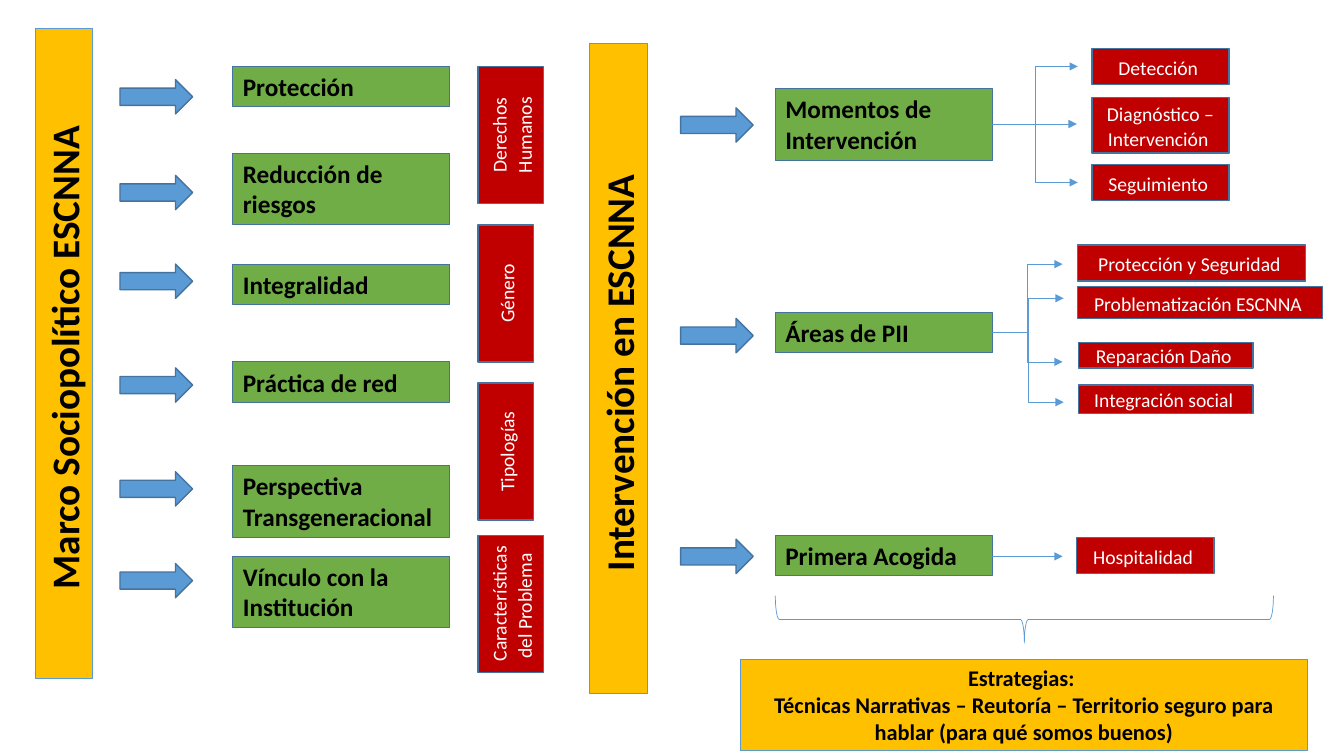
from lxml import etree
from pptx import Presentation
from pptx.dml.color import RGBColor
from pptx.enum import shapes, text
from pptx.oxml import ns
from pptx.util import Inches, Pt

AMBER = RGBColor(0xFF, 0xC0, 0x00)
GREEN = RGBColor(0x70, 0xAD, 0x47)
RED = RGBColor(0xC0, 0x00, 0x00)
BLUE = RGBColor(0x5B, 0x9B, 0xD5)
DARK_BLUE = RGBColor(0x43, 0x73, 0x9E)
BLACK = RGBColor(0, 0, 0)
WHITE = RGBColor(0xFF, 0xFF, 0xFF)

BANNERS = [
    ("Marco Sociopolítico ESCNNA ", 0.35, 0.28),
    ("Intervención en ESCNNA ", 5.85, 0.43),
]
PRINCIPLES = [
    ("Protección", 0.66, 1, 0.79),
    ("Reducción de riesgos", 1.52, 2, 1.74),
    ("Integralidad", 2.62, 1, 2.62),
    ("Práctica de red", 3.59, 1, 3.65),
    ("Perspectiva Transgeneracional", 4.62, 2, 4.68),
    ("Vínculo con la Institución", 5.52, 2, 5.59),
]
APPROACHES = [
    ("Derechos Humanos", 0.66, 0.65),
    ("Género", 2.23, 0.55),
    ("Tipologías", 3.8, 0.55),
    ("Características del Problema ", 5.31, 0.65),
]
INTERVENTIONS = [
    ("Momentos de Intervención", 0.88, 2, 1.07, [
        ("Detección ", (10.83, 0.48, 1.36, 0.36), (10.69, 0.66)),
        ("Diagnóstico – Intervención ", (10.83, 0.97, 1.36, 0.55), (10.68, 1.23)),
        ("Seguimiento ", (10.83, 1.63, 1.36, 0.36), (10.69, 1.81)),
    ]),
    ("Áreas de PII", 3.1, 1, 3.16, [
        ("Protección y Seguridad ", (10.69, 2.43, 2.26, 0.36), (10.54, 2.62)),
        ("Problematización ESCNNA ", (10.69, 2.84, 2.43, 0.32), (10.55, 2.96)),
        ("Reparación Daño ", (10.7, 3.4, 1.73, 0.25), (10.54, 3.59)),
        ("Integración social ", (10.7, 3.82, 1.73, 0.28), (10.55, 3.99)),
    ]),
    ("Primera Acogida", 5.31, 1, 5.35, [
        ("Hospitalidad ", (10.68, 5.33, 1.36, 0.36), (10.54, 5.52)),
    ]),
]
STRATEGIES = [
    "Estrategias: ",
    "Técnicas Narrativas – Reutoría – Territorio seguro para hablar (para qué somos buenos)",
]

BOX_WIDTH = 2.15
BOX_HEIGHTS = {1: 0.4, 2: 0.71}


def add_figure(slide, kind, frame, fill, line, width, turned=False):
    """Add a preset shape whose visible frame is given, optionally turned to read upwards."""
    left, top, across, down = frame
    if turned:
        left, top = left + (across - down) / 2, top + (down - across) / 2
        across, down = down, across
    shape = slide.shapes.add_shape(kind, *map(Inches, (left, top, across, down)))
    shape.shadow.inherit = False
    shape.rotation = 270 if turned else 0
    if fill is None:
        shape.fill.background()
    else:
        shape.fill.solid()
        shape.fill.fore_color.rgb = fill
    shape.line.color.rgb = line
    shape.line.width = Pt(width)
    return shape


def write(shape, lines, size, color, bold, align, anchor):
    """Write one paragraph per line into the shape."""
    frame = shape.text_frame
    frame.word_wrap = True
    frame.vertical_anchor = anchor
    for index, line in enumerate(lines):
        paragraph = frame.paragraphs[0] if index == 0 else frame.add_paragraph()
        paragraph.alignment = align
        run = paragraph.add_run()
        run.text = line
        run.font.name = "Calibri"
        run.font.size = Pt(size)
        run.font.bold = bold
        run.font.color.rgb = color


def add_amber(slide, lines, frame, size, turned=False):
    """Add an amber box with bold centred text."""
    shape = add_figure(slide, shapes.MSO_SHAPE.RECTANGLE, frame, AMBER, BLUE, 0.75, turned)
    write(shape, lines, size, BLACK, True, text.PP_ALIGN.CENTER, text.MSO_ANCHOR.TOP)
    shape.text_frame.auto_size = text.MSO_AUTO_SIZE.SHAPE_TO_FIT_TEXT


def add_green(slide, label, left, top, line_count, arrow_left, arrow_top):
    """Add a green box and the block arrow that leads to it."""
    add_figure(slide, shapes.MSO_SHAPE.RIGHT_ARROW, (arrow_left, arrow_top, 0.72, 0.34),
               BLUE, DARK_BLUE, 1)
    frame = (left, top, BOX_WIDTH, BOX_HEIGHTS[line_count])
    shape = add_figure(slide, shapes.MSO_SHAPE.RECTANGLE, frame, GREEN, DARK_BLUE, 0.75)
    write(shape, [label], 18, BLACK, True, text.PP_ALIGN.LEFT, text.MSO_ANCHOR.TOP)
    shape.text_frame.auto_size = text.MSO_AUTO_SIZE.SHAPE_TO_FIT_TEXT


def add_red(slide, label, frame, turned=False):
    """Add a red box with centred white text."""
    shape = add_figure(slide, shapes.MSO_SHAPE.RECTANGLE, frame, RED, DARK_BLUE, 1, turned)
    write(shape, [label], 14, WHITE, False, text.PP_ALIGN.CENTER, text.MSO_ANCHOR.MIDDLE)
    paragraph = shape.text_frame.paragraphs[0]
    paragraph.line_spacing = 1.07
    paragraph.space_after = Pt(8)


def add_link(slide, start, end):
    """Add an arrow that is straight on a level run and bent otherwise."""
    level = start[1] == end[1]
    kind = shapes.MSO_CONNECTOR.STRAIGHT if level else shapes.MSO_CONNECTOR.ELBOW
    link = slide.shapes.add_connector(kind, *map(Inches, (*start, *end)))
    link.line.color.rgb = BLUE
    link.line.width = Pt(0.5)
    etree.SubElement(link.line._get_or_add_ln(), ns.qn("a:tailEnd"), type="triangle")
    etree.SubElement(link._element.spPr, ns.qn("a:effectLst"))


def main():
    """Build the slide and save it."""
    presentation = Presentation()
    presentation.slide_width = Inches(13.33)
    presentation.slide_height = Inches(7.5)
    slide = presentation.slides.add_slide(presentation.slide_layouts[6])

    for label, left, top in BANNERS:
        add_amber(slide, [label], (left, top, 0.57, 6.45), 28, turned=True)
    for label, top, line_count, arrow_top in PRINCIPLES:
        add_green(slide, label, 2.31, top, line_count, 1.19, arrow_top)
    for label, top, width in APPROACHES:
        add_red(slide, label, (4.74, top, width, 1.36), turned=True)

    for label, top, line_count, arrow_top, details in INTERVENTIONS:
        add_green(slide, label, 7.69, top, line_count, 6.75, arrow_top)
        middle = round(top + BOX_HEIGHTS[line_count] / 2, 2)
        if line_count == 2:
            middle = details[1][2][1]
        elif len(details) == 1:
            middle = details[0][2][1]
        for detail, frame, tip in details:
            add_link(slide, (7.69 + BOX_WIDTH, middle), tip)
            add_red(slide, detail, frame)

    add_figure(slide, shapes.MSO_SHAPE.LEFT_BRACE, (7.69, 5.91, 4.94, 0.47),
               None, BLUE, 0.5, turned=True)
    add_amber(slide, STRATEGIES, (7.34, 6.54, 5.63, 0.91), 16)
    presentation.save("out.pptx")


if __name__ == "__main__":
    main()
